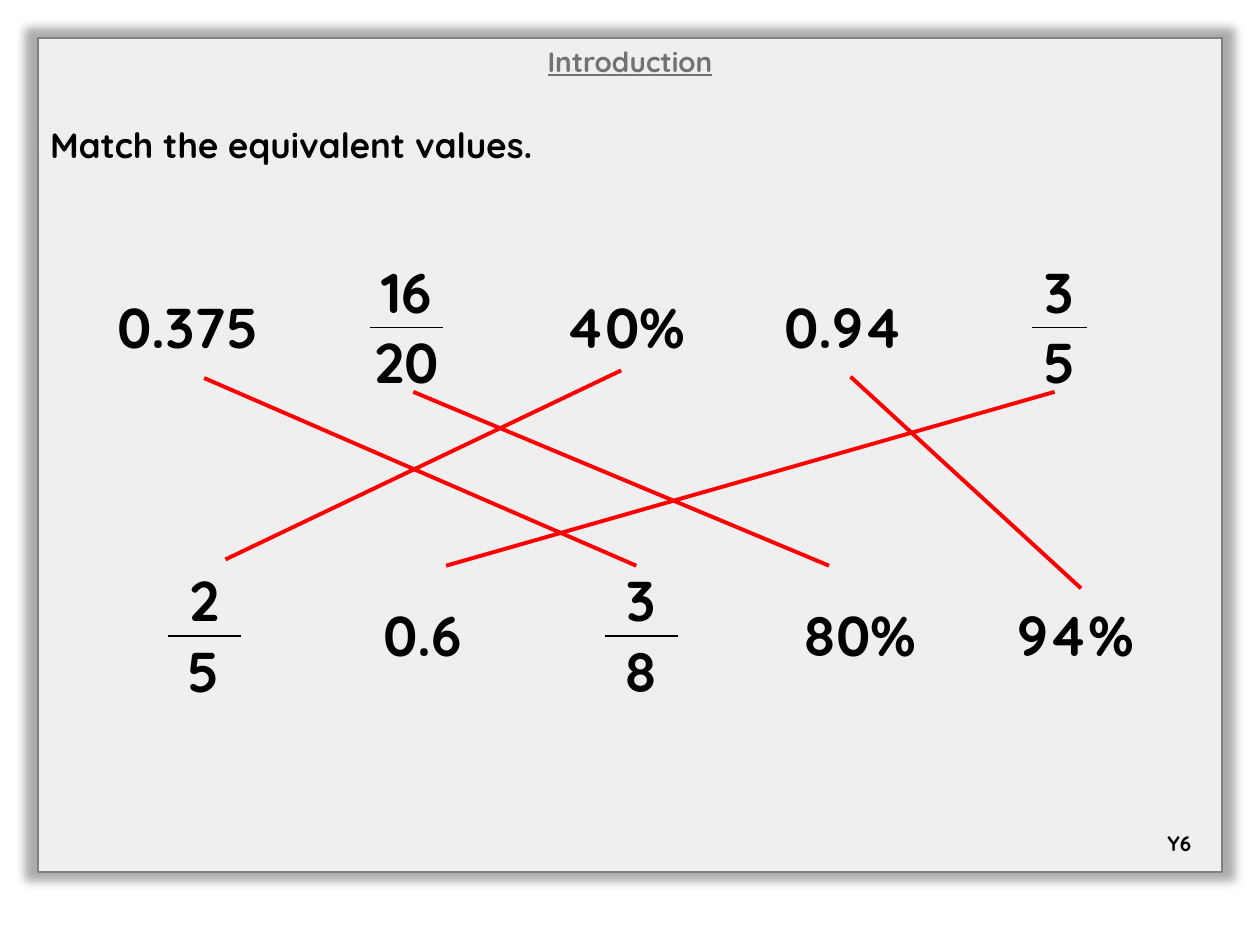
"""Build a slide on matching equivalent fractions, decimals and percentages."""
from typing import NamedTuple

from lxml import etree
from pptx import Presentation
from pptx.dml.color import RGBColor
from pptx.enum.shapes import MSO_CONNECTOR, MSO_SHAPE
from pptx.enum.text import MSO_ANCHOR, PP_ALIGN
from pptx.oxml import parse_xml
from pptx.oxml.ns import nsdecls, qn
from pptx.util import Inches, Pt

RECT = MSO_SHAPE.RECTANGLE
LINE = MSO_CONNECTOR.STRAIGHT
TOP, MIDDLE = MSO_ANCHOR.TOP, MSO_ANCHOR.MIDDLE
LEFT, CENTER = PP_ALIGN.LEFT, PP_ALIGN.CENTER
FONT = "Quicksand"
PLAIN = "{2D5ABB26-0587-4C30-8999-92F81FD0307C}"
ROW = 0.54


class Band(NamedTuple):
    left: float
    top: float
    widths: list[float]
    values: dict[int, str]


class Match(NamedTuple):
    x1: float
    y1: float
    x2: float
    y2: float


BANDS = [
    Band(0.63, 2.04, [1.73] + [0.58] * 3 + [1.73] * 2 + [0.63, 0.44, 0.63],
         {0: "0.375", 2: "16/20", 4: "40%", 5: "0.94", 7: "3/5"}),
    Band(0.75, 4.49, ([0.58] * 3 + [1.73]) * 2 + [1.7],
         {1: "2/5", 3: "0.6", 5: "3/8", 7: "80%", 8: "94%"}),
]
MATCHES = [
    Match(3.54, 4.49, 8.37, 3.11),
    Match(1.79, 4.44, 4.93, 2.94),
    Match(6.58, 4.49, 3.28, 3.11),
    Match(1.62, 3, 5.05, 4.49),
    Match(6.75, 2.99, 8.58, 4.67),
]


def color(value: str) -> RGBColor:
    return RGBColor.from_string(value)


def write(frame, text: str, size: float, align=CENTER, anchor=MIDDLE, ink: str = "000000"):
    frame.text = text
    frame.word_wrap = True
    frame.vertical_anchor = anchor
    para = frame.paragraphs[0]
    para.alignment = align
    font = para.runs[0].font
    font.name, font.size, font.bold = FONT, Pt(size), True
    font.color.rgb = color(ink)
    return font


def draw_panel(slide, text: str) -> None:
    panel = slide.shapes.add_shape(RECT, Inches(0.3), Inches(0.3), Inches(9.4), Inches(6.62))
    panel.fill.solid()
    panel.fill.fore_color.rgb = color("FFFFFF")
    tint = panel.fill._xPr.find(qn("a:solidFill"))[0]
    etree.SubElement(tint, qn("a:alpha"), val="82000")
    panel.line.color.rgb = color("808080")
    panel.line.width = Pt(1)
    panel._element.spPr.append(parse_xml(
        f'<a:effectLst {nsdecls("a")}><a:outerShdw blurRad="63500" sx="102000" sy="102000" '
        'algn="ctr" rotWithShape="0"><a:srgbClr val="000000"><a:alpha val="40000"/>'
        '</a:srgbClr></a:outerShdw></a:effectLst>'))
    panel.text_frame.margin_top = Inches(0.68)
    write(panel.text_frame, text, 20, LEFT, TOP)


def draw_title(slide, text: str) -> None:
    title = slide.shapes.title
    title.left, title.top = Inches(0.3), Inches(0.3)
    title.width, title.height = Inches(9.4), Inches(0.4)
    write(title.text_frame, text, 16, CENTER, TOP, "767171").underline = True
    slide.shapes._spTree.append(title._element)


def fill_cell(cell, text: str) -> None:
    write(cell.text_frame, text, 32)
    cell.vertical_anchor = MIDDLE
    cell.margin_left = cell.margin_right = 0
    cell.margin_top = cell.margin_bottom = 0


def add_rule(cell, tag: str) -> None:
    cell._tc.get_or_add_tcPr().insert(0, parse_xml(
        f'<a:{tag} {nsdecls("a")} w="12700"><a:solidFill><a:srgbClr val="000000"/>'
        f'</a:solidFill></a:{tag}>'))


def draw_band(slide, band: Band) -> None:
    count = len(band.widths)
    frame = slide.shapes.add_table(2, count, Inches(band.left), Inches(band.top),
                                   Inches(sum(band.widths)), Inches(2 * ROW))
    table = frame.table
    table.first_row = table.horz_banding = False
    table._tbl.tblPr.find(qn("a:tableStyleId")).text = PLAIN
    for row in table.rows:
        row.height = Inches(ROW)
    for col, width in enumerate(band.widths):
        table.columns[col].width = Inches(width)
        upper, lower = table.cell(0, col), table.cell(1, col)
        upper.fill.background()
        lower.fill.background()
        text = band.values.get(col, "")
        if "/" in text:
            for cell, part, tag in zip((upper, lower), text.split("/"), ("lnB", "lnT")):
                fill_cell(cell, part)
                add_rule(cell, tag)
        else:
            upper.merge(lower)
            if text:
                fill_cell(upper, text)


def draw_match(slide, match: Match) -> None:
    line = slide.shapes.add_connector(LINE, *(Inches(n) for n in match))
    line.line.color.rgb = color("FF0000")
    line.line.width = Pt(2.25)
    etree.SubElement(line._element.spPr, qn("a:effectLst"))


def main() -> None:
    deck = Presentation()
    deck.slide_width, deck.slide_height = Inches(10), Inches(7.5)
    slide = deck.slides.add_slide(deck.slide_layouts[5])
    draw_panel(slide, "Match the equivalent values.")
    draw_title(slide, "Introduction")
    for band in BANDS:
        draw_band(slide, band)
    for match in MATCHES:
        draw_match(slide, match)
    year = slide.shapes.add_textbox(Inches(9.11), Inches(6.54), Inches(0.5), Inches(0.3))
    write(year.text_frame, "Y6", 12)
    deck.save("out.pptx")


if __name__ == "__main__":
    main()
